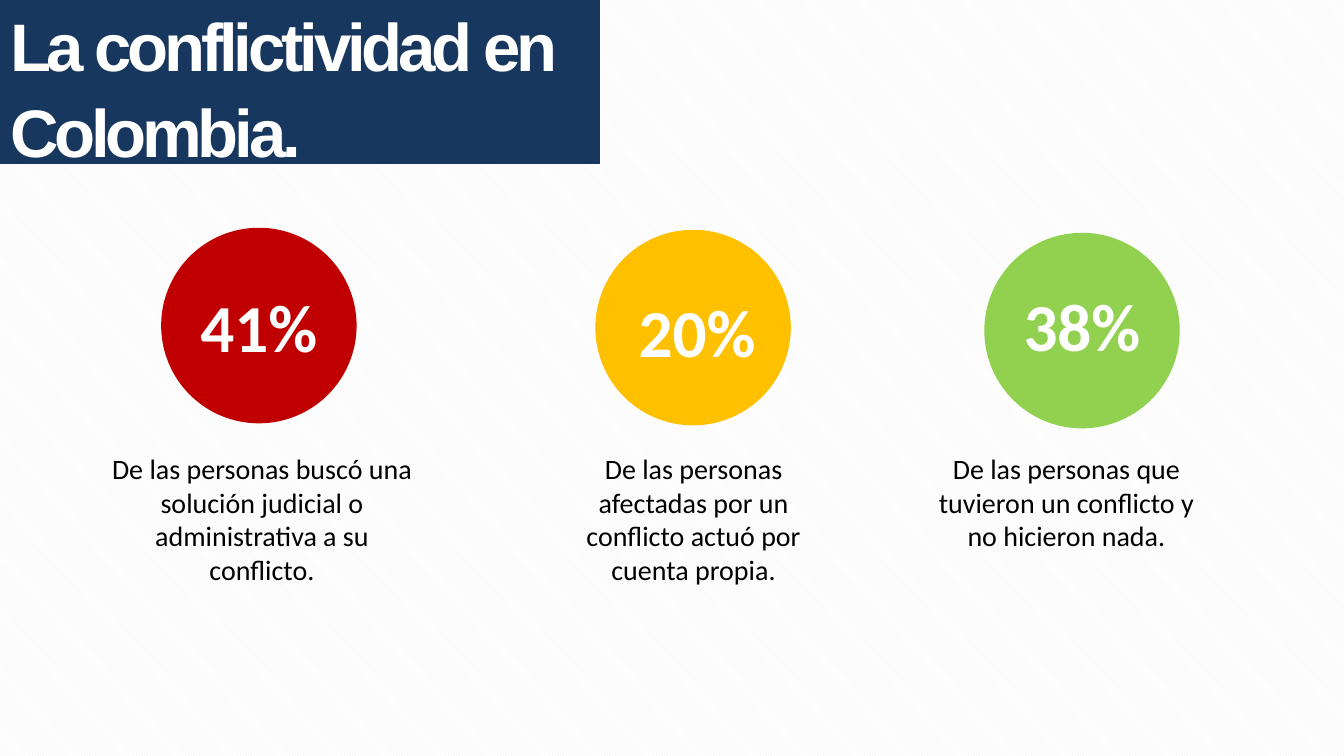
from dataclasses import dataclass
from typing import Any, NamedTuple, Optional

import pptx
import pptx.dml.color
import pptx.enum.dml
import pptx.enum.shapes
import pptx.enum.text
import pptx.util

WIDE, HIGH = 13.34, 7.5
ALIGN = pptx.enum.text.PP_ALIGN
ANCHOR = pptx.enum.text.MSO_ANCHOR
FIT = pptx.enum.text.MSO_AUTO_SIZE
FORM = pptx.enum.shapes.MSO_SHAPE


@dataclass(frozen=True)
class Theme:
    navy: str = "17375E"
    red: str = "C00000"
    amber: str = "FFC000"
    green: str = "92D050"
    white: str = "FFFFFF"
    black: str = "000000"
    stripe: str = "F2F2F2"
    head: str = "Arial"
    body: str = "Calibri"
    big: int = 48
    small: int = 20


class Box(NamedTuple):
    """Left, top, width and height in percent of the slide."""
    left: float
    top: float
    width: float
    height: float

    def place(self) -> list[int]:
        return [pptx.util.Inches(share * side / 100)
                for share, side in zip(self, (WIDE, HIGH, WIDE, HIGH))]


class Figure(NamedTuple):
    value: str
    color: str
    left: float
    top: float
    text: str
    note: Box
    label: Optional[Box] = None


THEME = Theme()
DISC = (14.54, 25.87)
TITLE = Box(-0.22, -0.93, 44.83, 22.53)
FIGURES = [
    Figure("41%", THEME.red, 11.99, 30.13,
           "De las personas buscó una solución judicial o administrativa a su conflicto.",
           Box(7.2, 59.07, 24.59, 19.33)),
    Figure("20%", THEME.amber, 44.3, 30.4,
           "De las personas afectadas por un conflicto actuó por cuenta propia.",
           Box(40.18, 59.07, 22.86, 19.33), Box(46.7, 37.73, 10.34, 12.13)),
    Figure("38%", THEME.green, 73.24, 30.8,
           "De las personas que tuvieron un conflicto y no hicieron nada.",
           Box(67.92, 59.07, 22.86, 14.8), Box(75.34, 36.93, 10.34, 12.13)),
]


def tint(code: str) -> pptx.dml.color.RGBColor:
    return pptx.dml.color.RGBColor.from_string(code)


def write(shape: Any, text: str, *, size: int, color: str, font: str = THEME.body,
          bold: bool = False, align: Any = ALIGN.CENTER, anchor: Any = ANCHOR.TOP,
          wrap: bool = True, fit: Any = FIT.NONE, pad: tuple[float, float] = (0.1, 0.05),
          lead: float = 1.0, track: int = 0) -> None:
    """Fill a shape with one paragraph; track is letter spacing in points."""
    frame = shape.text_frame
    frame.word_wrap, frame.auto_size, frame.vertical_anchor = wrap, fit, anchor
    frame.margin_left = frame.margin_right = pptx.util.Inches(pad[0])
    frame.margin_top = frame.margin_bottom = pptx.util.Inches(pad[1])
    para = frame.paragraphs[0]
    para.alignment, para.line_spacing = align, lead
    run = para.add_run()
    run.text = text
    run.font.name, run.font.size, run.font.bold = font, pptx.util.Pt(size), bold
    run.font.color.rgb = tint(color)
    if track:
        run.font._element.set("spc", str(track * 100))


def draw(slide: Any, form: Any, box: Box, color: str, edge: float = 0) -> Any:
    shape = slide.shapes.add_shape(form, *box.place())
    shape.shadow.inherit = False
    shape.fill.solid()
    shape.fill.fore_color.rgb = tint(color)
    if edge:
        shape.line.color.rgb = tint(color)
        shape.line.width = pptx.util.Pt(edge)
    else:
        shape.line.fill.background()
    return shape


def show(slide: Any, item: Figure) -> None:
    """Draw a disc with its value and the note below it."""
    disc = draw(slide, FORM.OVAL, Box(item.left, item.top, *DISC), item.color)
    style = dict(size=THEME.big, color=THEME.white, bold=True)
    if item.label:
        label = slide.shapes.add_textbox(*item.label.place())
        write(label, item.value, wrap=False, fit=FIT.SHAPE_TO_FIT_TEXT, **style)
    else:
        write(disc, item.value, anchor=ANCHOR.MIDDLE, **style)
    note = slide.shapes.add_textbox(*item.note.place())
    write(note, item.text, size=THEME.small, color=THEME.black,
          fit=FIT.SHAPE_TO_FIT_TEXT)


def main() -> None:
    deck = pptx.Presentation()
    deck.slide_width = pptx.util.Inches(WIDE)
    deck.slide_height = pptx.util.Inches(HIGH)
    slide = deck.slides.add_slide(deck.slide_layouts[6])
    back = slide.background.fill
    back.patterned()
    back.pattern = pptx.enum.dml.MSO_PATTERN.LIGHT_DOWNWARD_DIAGONAL
    back.fore_color.rgb = tint(THEME.stripe)
    back.back_color.rgb = tint(THEME.white)
    title = draw(slide, FORM.RECTANGLE, TITLE, THEME.navy, edge=0.75)
    write(title, "La conflictividad en Colombia.", size=THEME.big, color=THEME.white,
          font=THEME.head, bold=True, align=ALIGN.LEFT, pad=(0.13, 0.07),
          lead=1.06, track=-3)
    for item in FIGURES:
        show(slide, item)
    deck.save("out.pptx")


if __name__ == "__main__":
    main()
